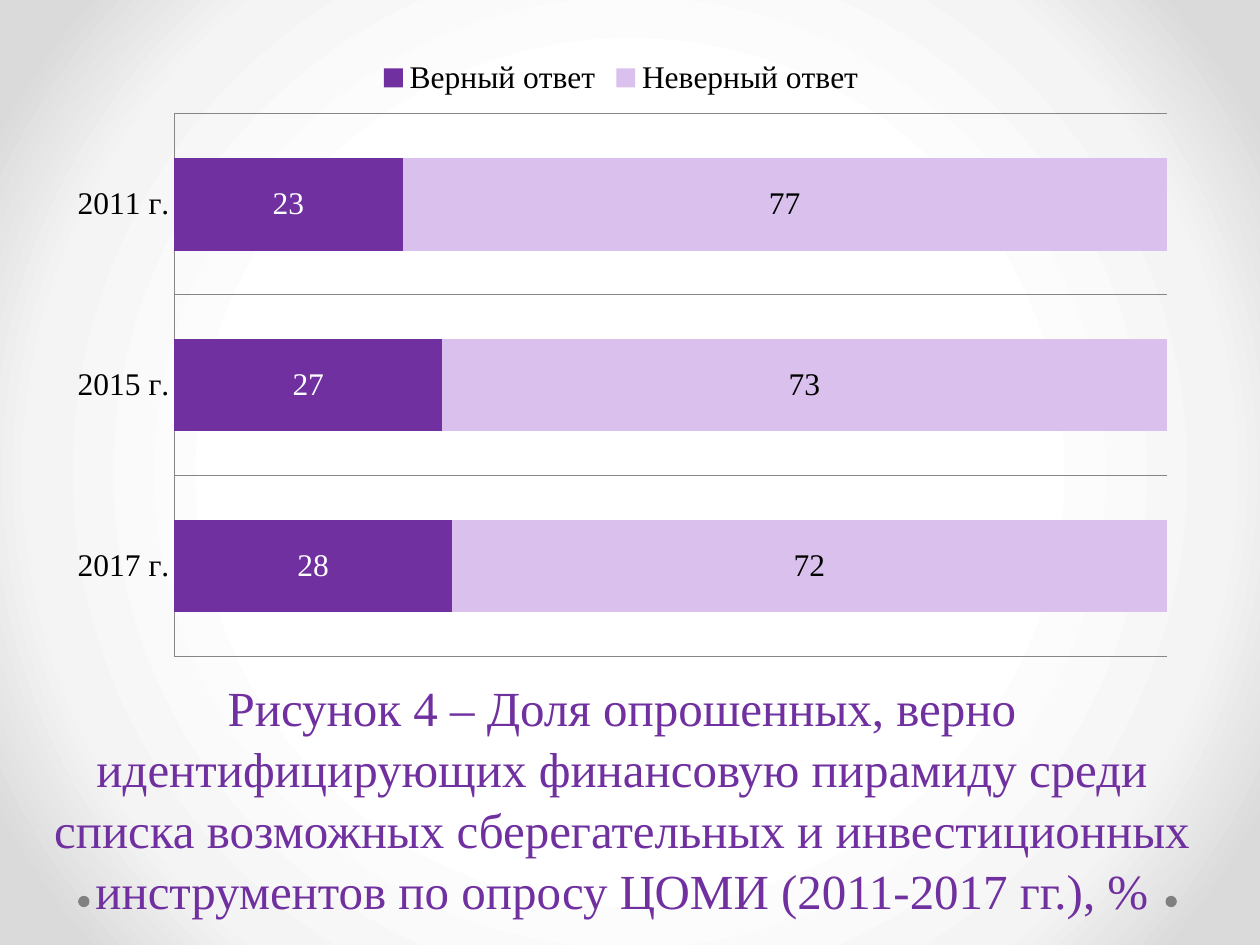
"""Build a slide with a stacked bar chart of survey answers and its caption."""
from dataclasses import dataclass

from lxml import etree
from pptx import Presentation
from pptx import util as u
from pptx.chart.data import CategoryChartData
from pptx.dml.color import RGBColor
from pptx.enum import chart as ch, shapes, text
from pptx.oxml import parse_xml
from pptx.oxml.ns import nsdecls, qn

WIDTH, HEIGHT = u.Inches(10), u.Inches(7.5)
FONT = "Times New Roman"
PURPLE, GREY = "7030A0", "868686"
YEARS = ("2017 г.", "2015 г.", "2011 г.")
CAPTION = (
    "Рисунок 4 – Доля опрошенных, верно идентифицирующих финансовую пирамиду "
    "среди списка возможных сберегательных и инвестиционных инструментов "
    "по опросу ЦОМИ (2011-2017 гг.), %"
)


@dataclass(frozen=True)
class Box:
    left: float
    top: float
    width: float
    height: float

    def place(self) -> tuple[int, int, int, int]:
        return (int(self.left * WIDTH), int(self.top * HEIGHT),
                int(self.width * WIDTH), int(self.height * HEIGHT))


@dataclass(frozen=True)
class Answer:
    name: str
    shares: tuple[int, ...]
    fill: str
    label: str


ANSWERS = (
    Answer("Верный ответ", (28, 27, 23), PURPLE, "FFFFFF"),
    Answer("Неверный ответ", (72, 73, 77), "DAC1ED", "000000"),
)
CHART_BOX = Box(0.043, 0.048, 0.9, 0.66)
CAPTION_BOX = Box(0.028, 0.71, 0.931, 0.27)
PLOT_BOX = Box(0.106, 0.11, 0.875, 0.87)
DOT_LEFTS = (0.062, 0.925)


def rgb(value: str) -> RGBColor:
    return RGBColor.from_string(value)


def style_font(font, size: float, colour: str) -> None:
    font.name, font.size, font.bold = FONT, u.Pt(size), False
    font.color.rgb = rgb(colour)


def style_line(line) -> None:
    line.color.rgb = rgb(GREY)
    line.width = u.Pt(0.75)


def paint_background(slide) -> None:
    slide.background.fill.gradient()
    gradient = slide.background._cSld.bg.bgPr.find(qn("a:gradFill"))
    stops = "".join(
        f'<a:gs pos="{share * 1000}"><a:srgbClr val="{colour}"/></a:gs>'
        for share, colour in ((50, "FFFFFF"), (76, "F4F4F4"), (92, "DADADA")))
    radial = parse_xml(
        f'<a:gradFill {nsdecls("a")} rotWithShape="1"><a:gsLst>{stops}</a:gsLst>'
        '<a:path path="circle"><a:fillToRect l="50000" t="50000" r="50000" b="50000"/>'
        '</a:path></a:gradFill>')
    gradient.getparent().replace(gradient, radial)


def add_dot(slide, left: float) -> None:
    dot = slide.shapes.add_shape(
        shapes.MSO_SHAPE.OVAL, *Box(left, 0.948, 0.009, 0.012).place())
    dot.shadow.inherit = False
    dot.fill.solid()
    dot.fill.fore_color.rgb = rgb("808080")
    dot.line.fill.background()


def write_caption(slide) -> None:
    title = slide.shapes.title
    title.left, title.top, title.width, title.height = CAPTION_BOX.place()
    frame = title.text_frame
    frame.word_wrap = True
    frame.auto_size = text.MSO_AUTO_SIZE.NONE
    frame.vertical_anchor = text.MSO_ANCHOR.BOTTOM
    paragraph = frame.paragraphs[0]
    paragraph.alignment = text.PP_ALIGN.CENTER
    paragraph.line_spacing = 1.04
    run = paragraph.add_run()
    run.text = CAPTION
    style_font(run.font, 28, PURPLE)


def fix_plot_area(chart, box: Box) -> None:
    plot_area = chart._chartSpace.chart.plotArea
    for stale in plot_area.findall(qn("c:layout")):
        plot_area.remove(stale)
    layout = etree.Element(qn("c:layout"))
    manual = etree.SubElement(layout, qn("c:manualLayout"))
    settings = {"layoutTarget": "inner", "xMode": "edge", "yMode": "edge",
                "x": box.left, "y": box.top, "w": box.width, "h": box.height}
    for tag, value in settings.items():
        etree.SubElement(manual, qn(f"c:{tag}")).set("val", str(value))
    plot_area.insert(0, layout)


def style_answer(series, answer: Answer) -> None:
    series.format.fill.solid()
    series.format.fill.fore_color.rgb = rgb(answer.fill)
    series.invert_if_negative = False
    labels = series.data_labels
    labels.show_value = True
    labels.position = ch.XL_LABEL_POSITION.CENTER
    style_font(labels.font, 18, answer.label)


def add_answer_chart(slide) -> None:
    survey = CategoryChartData(number_format="General")
    survey.categories = YEARS
    for answer in ANSWERS:
        survey.add_series(answer.name, answer.shares)
    chart = slide.shapes.add_chart(
        ch.XL_CHART_TYPE.BAR_STACKED_100, *CHART_BOX.place(), survey).chart
    style_font(chart.font, 18, "000000")
    chart.has_title = False
    chart.has_legend = True
    chart.legend.position = ch.XL_LEGEND_POSITION.TOP
    chart.legend.include_in_layout = False

    bars = chart.plots[0]
    bars.gap_width, bars.overlap, bars.vary_by_categories = 95, 100, False
    for series, answer in zip(bars.series, ANSWERS):
        style_answer(series, answer)

    years = chart.category_axis
    years.major_tick_mark = years.minor_tick_mark = ch.XL_TICK_MARK.NONE
    years.has_major_gridlines = True
    style_line(years.major_gridlines.format.line)
    style_line(years.format.line)
    chart.value_axis.has_major_gridlines = False
    chart.value_axis.visible = False
    fix_plot_area(chart, PLOT_BOX)


def main() -> None:
    deck = Presentation()
    deck.slide_width, deck.slide_height = WIDTH, HEIGHT
    slide = deck.slides.add_slide(deck.slide_layouts.get_by_name("Title Only"))
    paint_background(slide)
    for left in DOT_LEFTS:
        add_dot(slide, left)
    write_caption(slide)
    add_answer_chart(slide)
    deck.save("out.pptx")


if __name__ == "__main__":
    main()
